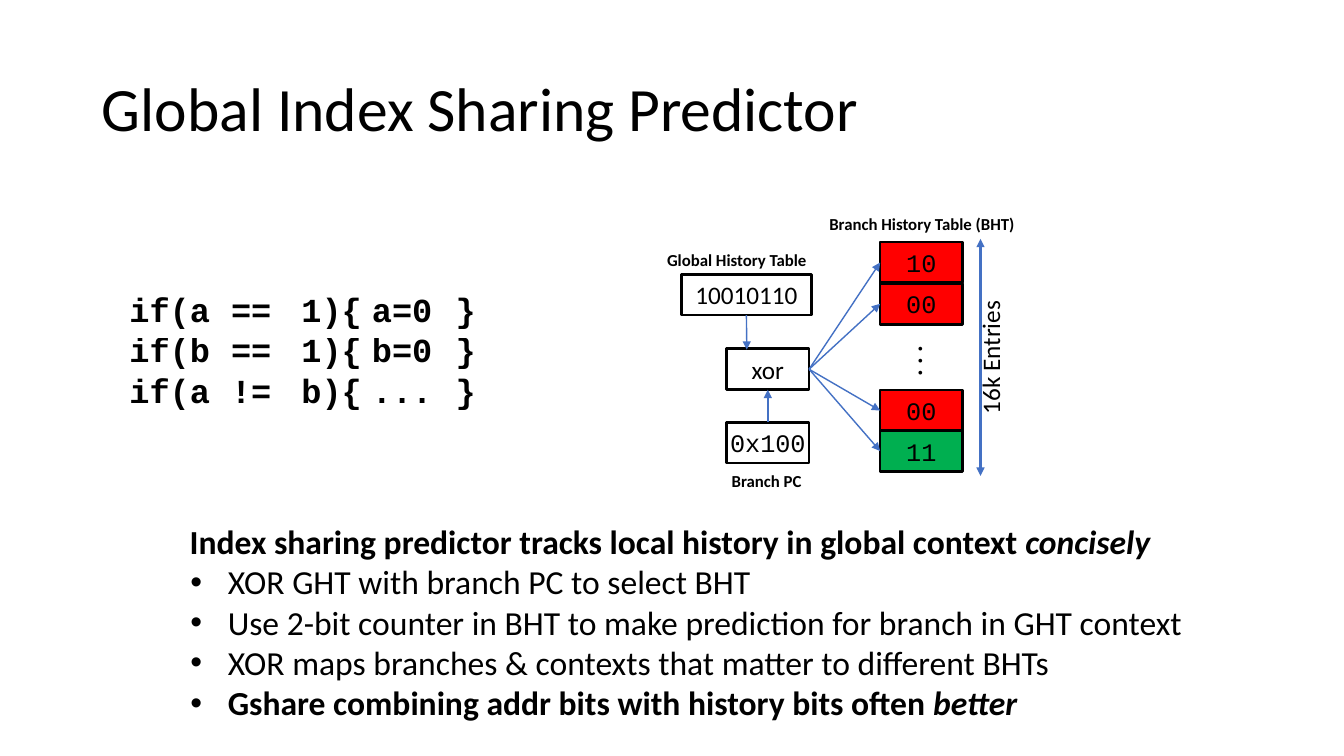
"""Build the Global Index Sharing Predictor slide."""
import pptx
import pptx.util
import pptx.dml.color
import pptx.enum.shapes
import pptx.enum.text
import pptx.oxml.ns
import lxml.etree

Cm, Pt = pptx.util.Cm, pptx.util.Pt
ALIGN = pptx.enum.text.PP_ALIGN
ANCHOR = pptx.enum.text.MSO_ANCHOR
qn = pptx.oxml.ns.qn
COLORS = {"black": "000000", "red": "FF0000", "green": "00AF50", "blue": "4471C4"}
MONO = "Courier New"


def rgb(name):
    return pptx.dml.color.RGBColor.from_string(COLORS[name])


def add_text(p, text, size=18, font="Calibri", bold=False, italic=False, align=ALIGN.LEFT):
    p.alignment = align
    r = p.add_run()
    r.text = text
    r.font.size = Pt(size)
    r.font.name = font
    r.font.bold = bold
    r.font.italic = italic
    r.font.color.rgb = rgb("black")


prs = pptx.Presentation()
prs.slide_width, prs.slide_height = Cm(33.87), Cm(19.05)
s = prs.slides.add_slide(prs.slide_layouts[1])

title, body = s.shapes.title, s.placeholders[1]
for sp, (x, y, w, h) in ((title, (2.57, 1.77, 30.6, 1.9)), (body, (4.75, 13.13, 25.9, 5.16))):
    sp.left, sp.top, sp.width, sp.height = Cm(x), Cm(y), Cm(w), Cm(h)
    tf = sp.text_frame
    tf.margin_left = tf.margin_top = tf.margin_right = tf.margin_bottom = 0
    tf.vertical_anchor = ANCHOR.TOP
    tf.auto_size = pptx.enum.text.MSO_AUTO_SIZE.NONE
    tf.word_wrap = True

add_text(title.text_frame.paragraphs[0], "Global Index Sharing Predictor", size=44)

lines = [
    ("Index sharing predictor tracks local history in global context ", "concisely", True),
    ("XOR GHT with branch PC to select BHT", "", False),
    ("Use 2-bit counter in BHT to make prediction for branch in GHT context", "", False),
    ("XOR maps branches & contexts that matter to different BHTs", "", False),
    ("Gshare combining addr bits with history bits often ", "better", True),
]
tf = body.text_frame
for i, (text, emphasis, bold) in enumerate(lines):
    p = tf.paragraphs[0] if i == 0 else tf.add_paragraph()
    p.space_before = Pt(0 if i else 1)
    add_text(p, text, size=24, bold=bold)
    if emphasis:
        add_text(p, emphasis, size=24, bold=bold, italic=True)
    pPr = p._p.get_or_add_pPr()
    pPr.set("marL", str(Cm(0.99 if i else 0.03)))
    pPr.set("indent", str(Cm(-0.94 if i else 0)))
    if i:
        lxml.etree.SubElement(pPr, qn("a:buFont")).set("typeface", "Arial")
        lxml.etree.SubElement(pPr, qn("a:buChar")).set("char", "•")
    else:
        lxml.etree.SubElement(pPr, qn("a:buNone"))

code = [
    ("if(a", "==", "1){", "a=0", "}"),
    ("if(b", "==", "1){", "b=0", "}"),
    ("if(a", "!=", "b){", "...", "}"),
]
columns = [
    (2.39, ALIGN.LEFT), (1.52, ALIGN.CENTER), (2.03, ALIGN.RIGHT),
    (2.03, ALIGN.CENTER), (0.84, ALIGN.RIGHT),
]
table = s.shapes.add_table(3, 5, Cm(3.18), Cm(7.42), Cm(8.81), Cm(3.16)).table
table.first_row = table.horz_banding = False
for row, height in zip(table.rows, (1.07, 1.02, 1.07)):
    row.height = Cm(height)
for j, (width, align) in enumerate(columns):
    table.columns[j].width = Cm(width)
    for i, tokens in enumerate(code):
        cell = table.cell(i, j)
        cell.fill.background()
        cell.margin_left = Cm(0 if j else 0.08)
        cell.margin_top = cell.margin_right = cell.margin_bottom = 0
        p = cell.text_frame.paragraphs[0]
        p.line_spacing = Pt(25.6 if i else 27.3)
        add_text(p, tokens[j], size=24, font=MONO, bold=True, align=align)

boxes = [
    ("10010110", 17.17, 6.91, 3.28, "Calibri", None),
    ("xor", 18.31, 8.79, 2.08, "Calibri", None),
    ("0x100", 18.31, 10.64, 2.08, MONO, None),
    ("10", 22.18, 6.1, 2.08, MONO, "red"),
    ("00", 22.18, 7.14, 2.08, MONO, "red"),
    ("00", 22.18, 9.83, 2.08, MONO, "red"),
    ("11", 22.18, 10.85, 2.08, MONO, "green"),
]
shapes = []
for text, x, y, w, font, fill in boxes:
    sp = s.shapes.add_shape(pptx.enum.shapes.MSO_SHAPE.RECTANGLE, Cm(x), Cm(y), Cm(w), Cm(1.03))
    sp.shadow.inherit = False
    if fill:
        sp.fill.solid()
        sp.fill.fore_color.rgb = rgb(fill)
    else:
        sp.fill.background()
    sp.line.color.rgb = rgb("black")
    sp.line.width = Pt(2)
    tf = sp.text_frame
    tf.margin_left = tf.margin_top = tf.margin_right = tf.margin_bottom = 0
    tf.vertical_anchor = ANCHOR.MIDDLE
    add_text(tf.paragraphs[0], text, font=font, align=ALIGN.CENTER)
    shapes.append(sp)
history, xor, pc, *entries = shapes

labels = [
    ("Branch History Table (BHT)", 20.9, 5.38, 4.9, 0.58, 12, True, False),
    ("Global History Table", 16.81, 6.3, 3.75, 0.58, 12, True, False),
    ("Branch PC", 18.44, 11.86, 2, 0.58, 12, True, False),
    ("16k Entries", 24.69, 7.42, 0.71, 3.02, 18, False, True),
    (". . .", 22.73, 8.4, 0.71, 1.1, 18, True, True),
]
for text, x, y, w, h, size, bold, vertical in labels:
    tf = s.shapes.add_textbox(Cm(x), Cm(y), Cm(w), Cm(h)).text_frame
    tf.word_wrap = True
    tf.margin_left = tf.margin_top = tf.margin_right = tf.margin_bottom = 0
    p = tf.paragraphs[0]
    if vertical:
        tf._txBody.bodyPr.set("vert", "vert270")
        p.line_spacing = Pt(18.1)
    else:
        p.space_before = Pt(1)
    add_text(p, text, size=size, bold=bold)

arrows = [(xor, 3, entry, 1) for entry in entries]
arrows += [(pc, 0, xor, 2), (history, 2, None, None), (None, None, None, None)]
for start, start_site, end, end_site in arrows:
    c = s.shapes.add_connector(
        pptx.enum.shapes.MSO_CONNECTOR.STRAIGHT, Cm(24.71), Cm(6.02), Cm(24.71), Cm(11.99))
    if start:
        c.begin_connect(start, start_site)
        if end:
            c.end_connect(end, end_site)
        else:
            c.end_x, c.end_y = Cm(18.82), Cm(8.81)
    c.line.color.rgb = rgb("blue")
    c.line.width = Pt(1 if start else 1.5)
    spPr = c._element.spPr
    ln = spPr.find(qn("a:ln"))
    for tag in ("a:tailEnd",) if start else ("a:headEnd", "a:tailEnd"):
        lxml.etree.SubElement(ln, qn(tag)).set("type", "triangle")
    lxml.etree.SubElement(spPr, qn("a:effectLst"))

prs.save("out.pptx")
